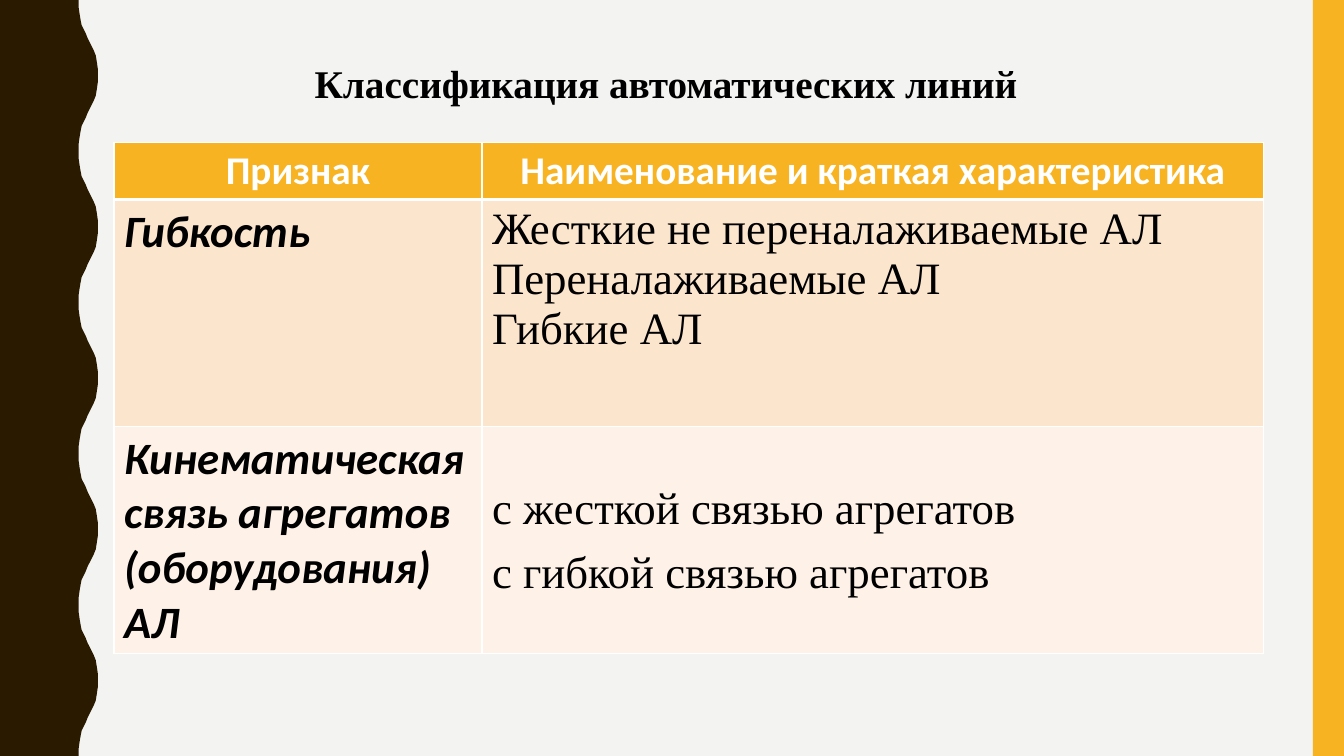
from dataclasses import dataclass

from lxml.etree import SubElement
from pptx import Presentation
from pptx.dml.color import RGBColor
from pptx.enum.shapes import MSO_SHAPE as Shape
from pptx.enum.text import MSO_ANCHOR as Anchor, MSO_AUTO_SIZE as AutoSize, PP_ALIGN as Align
from pptx.oxml.ns import qn
from pptx.util import Inches, Pt

COLOURS = {
    "page": "F3F3F2", "wave": "2A1A00", "accent": "F8B323", "white": "FFFFFF",
    "black": "000000", "band_dark": "FCE5CD", "band_light": "FEF2E8",
}
SERIF, SANS = "Times New Roman", "Calibri"

# One half of a wave; the other half mirrors it
WAVE_PERIOD, WAVE_COUNT = 1.5, 5
HALF_WAVE = [
    (0.78, 0), (0.78, 0.07), (0.79, 0.14), (0.8, 0.2), (0.81, 0.25),
    (0.83, 0.29), (0.85, 0.33), (0.87, 0.38), (0.89, 0.42), (0.91, 0.46),
    (0.93, 0.5), (0.95, 0.55), (0.96, 0.61), (0.97, 0.68), (0.97, 0.75),
]


@dataclass(frozen=True)
class TextStyle:
    font: dict
    colour: str = "black"
    spacing: tuple = (1.0, 0)


@dataclass(frozen=True)
class CellText:
    lines: tuple
    style: TextStyle
    fill: str
    aligns: tuple
    anchor: Anchor = Anchor.TOP


TITLE = TextStyle({"name": SERIF, "size": Pt(28), "bold": True, "italic": False}, spacing=(1.07, 8))
HEADER = TextStyle({"name": SANS, "size": Pt(28), "bold": True, "italic": False}, "white")
FEATURE = TextStyle({"name": SANS, "size": Pt(32), "bold": True, "italic": True})
DETAIL = TextStyle({"name": SERIF, "size": Pt(32), "bold": False, "italic": False})
SPACED_DETAIL = TextStyle(DETAIL.font, spacing=(1.07, 8))

COLUMN_WIDTHS = (3.65, 7.75)
ROW_HEIGHTS = (0.57, 2.25, 2.25)
ROWS = (
    (
        CellText(("Признак",), HEADER, "accent", (Align.CENTER,)),
        CellText(("Наименование и краткая характеристика",), HEADER, "accent", (Align.CENTER,)),
    ),
    (
        CellText(("Гибкость",), FEATURE, "band_dark", (Align.LEFT,)),
        CellText(("Жесткие не переналаживаемые АЛ", "Переналаживаемые АЛ", "Гибкие АЛ"),
                 DETAIL, "band_dark", (Align.JUSTIFY, Align.JUSTIFY, Align.LEFT)),
    ),
    (
        CellText(("Кинематическая связь агрегатов (оборудования) АЛ",),
                 FEATURE, "band_light", (Align.LEFT,)),
        CellText(("с жесткой связью агрегатов", "с гибкой связью агрегатов"),
                 SPACED_DETAIL, "band_light", (Align.JUSTIFY, Align.JUSTIFY), Anchor.MIDDLE),
    ),
)


def rgb(name: str) -> RGBColor:
    return RGBColor.from_string(COLOURS[name])


def paint(shape, colour: str) -> None:
    shape.fill.solid()
    shape.fill.fore_color.rgb = rgb(colour)
    shape.line.fill.background()
    shape.shadow.inherit = False


def write_lines(frame, lines: tuple, aligns: tuple, style: TextStyle) -> None:
    for index, (line, align) in enumerate(zip(lines, aligns)):
        para = frame.paragraphs[0] if index == 0 else frame.add_paragraph()
        para.alignment = align
        para.line_spacing, space_after = style.spacing
        para.space_after = Pt(space_after)
        span = para.add_run()
        span.text = line
        for name, value in style.font.items():
            setattr(span.font, name, value)
        span.font.color.rgb = rgb(style.colour)


def add_borders(cell, widths: dict) -> None:
    properties = cell._tc.get_or_add_tcPr()
    for index, (side, width) in enumerate(widths.items()):
        line = SubElement(properties, qn(f"a:ln{side}"), w=str(Pt(width)))
        fill = SubElement(line, qn("a:solidFill"))
        SubElement(fill, qn("a:srgbClr"), val=COLOURS["white"])
        properties.insert(index, line)


def draw_wave(page) -> None:
    mirrored = [(x, WAVE_PERIOD - y) for x, y in reversed(HALF_WAVE[:-1])]
    edge = [(x, y + number * WAVE_PERIOD)
            for number in range(WAVE_COUNT) for x, y in HALF_WAVE + mirrored]
    points = [(Inches(x), Inches(y)) for x, y in edge + [(0, 7.5)]]
    builder = page.shapes.build_freeform(0, 0)
    builder.add_line_segments(points, close=True)
    paint(builder.convert_to_shape(), "wave")


def draw_title(page) -> None:
    box = page.shapes.title
    box.left, box.top, box.width, box.height = map(Inches, (3.02, 0.51, 7.24, 0.58))
    frame = box.text_frame
    settings = {"word_wrap": False, "auto_size": AutoSize.SHAPE_TO_FIT_TEXT,
                "vertical_anchor": Anchor.TOP}
    for name, value in settings.items():
        setattr(frame, name, value)
    write_lines(frame, ("Классификация автоматических линий",), (Align.JUSTIFY,), TITLE)


def draw_table(page) -> None:
    table = page.shapes.add_table(
        len(ROWS), len(COLUMN_WIDTHS), Inches(1.13), Inches(1.41),
        Inches(sum(COLUMN_WIDTHS)), Inches(sum(ROW_HEIGHTS))).table
    for column, width in zip(table.columns, COLUMN_WIDTHS):
        column.width = Inches(width)
    for row_index, (row, height) in enumerate(zip(ROWS, ROW_HEIGHTS)):
        table.rows[row_index].height = Inches(height)
        for column_index, content in enumerate(row):
            cell = table.cell(row_index, column_index)
            cell.fill.solid()
            cell.fill.fore_color.rgb = rgb(content.fill)
            cell.vertical_anchor = content.anchor
            write_lines(cell.text_frame, content.lines, content.aligns, content.style)
            # A thick rule separates the header from the body
            add_borders(cell, {"L": 1, "R": 1, "T": 3 if row_index == 1 else 1,
                               "B": 3 if row_index == 0 else 1})


def main() -> None:
    deck = Presentation()
    deck.slide_width, deck.slide_height = Inches(13.33), Inches(7.5)
    page = deck.slides.add_slide(deck.slide_layouts[5])

    # Background and side decoration
    page.background.fill.solid()
    page.background.fill.fore_color.rgb = rgb("page")
    draw_wave(page)
    stripe = page.shapes.add_shape(
        Shape.RECTANGLE, Inches(13.02), 0, Inches(0.31), Inches(7.5))
    paint(stripe, "accent")

    # Content
    draw_title(page)
    draw_table(page)
    deck.save("out.pptx")


if __name__ == "__main__":
    main()
